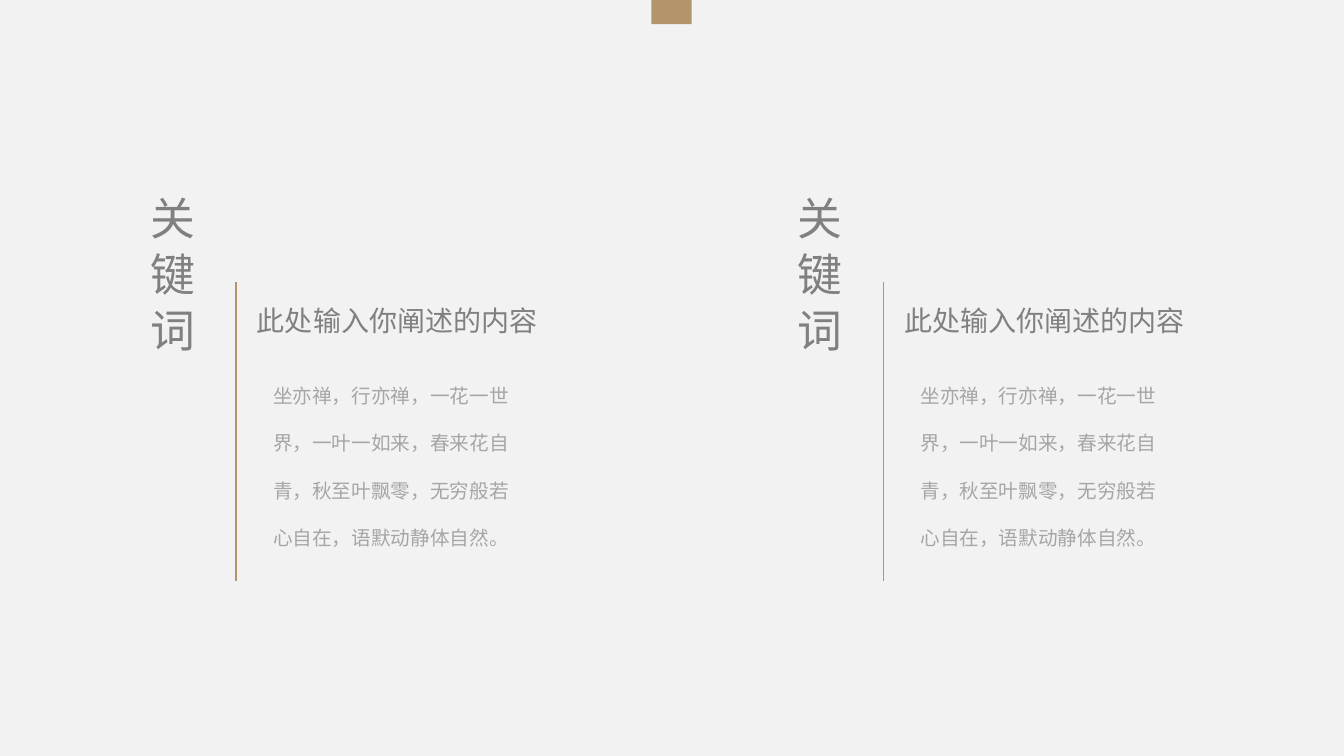
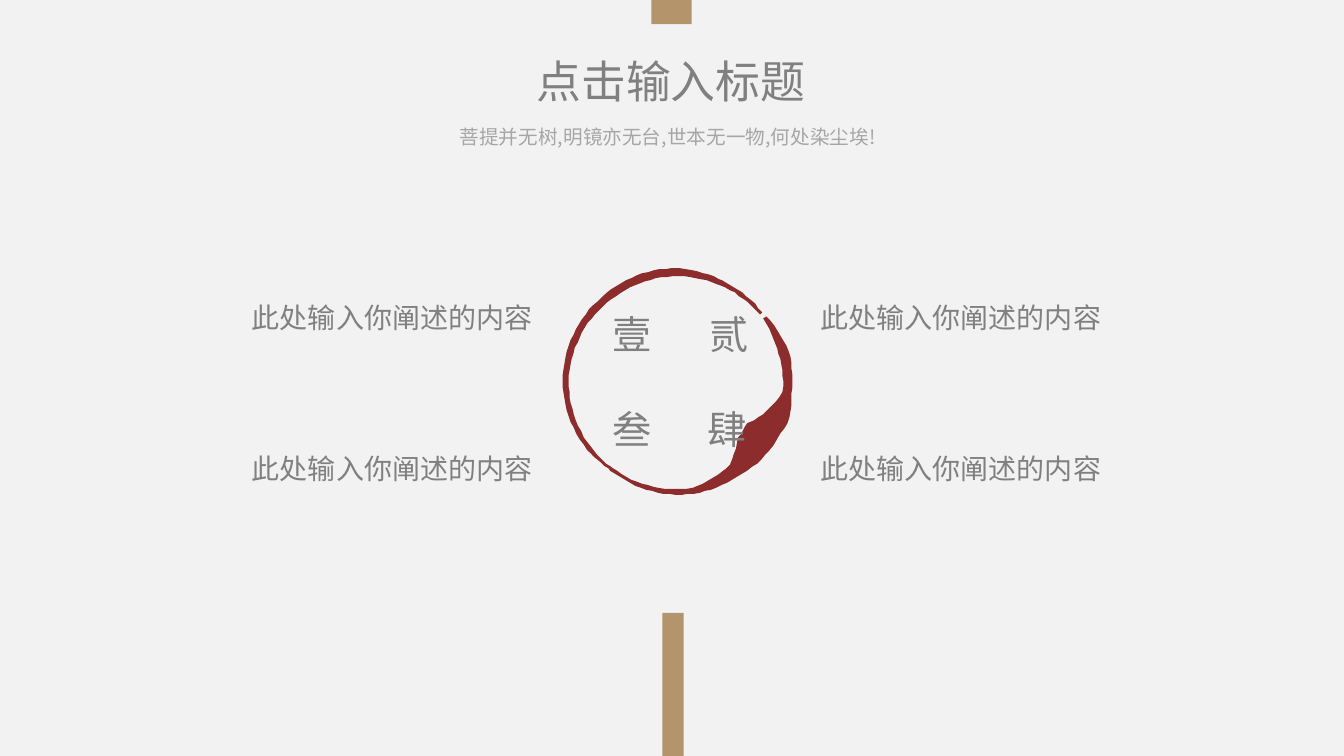
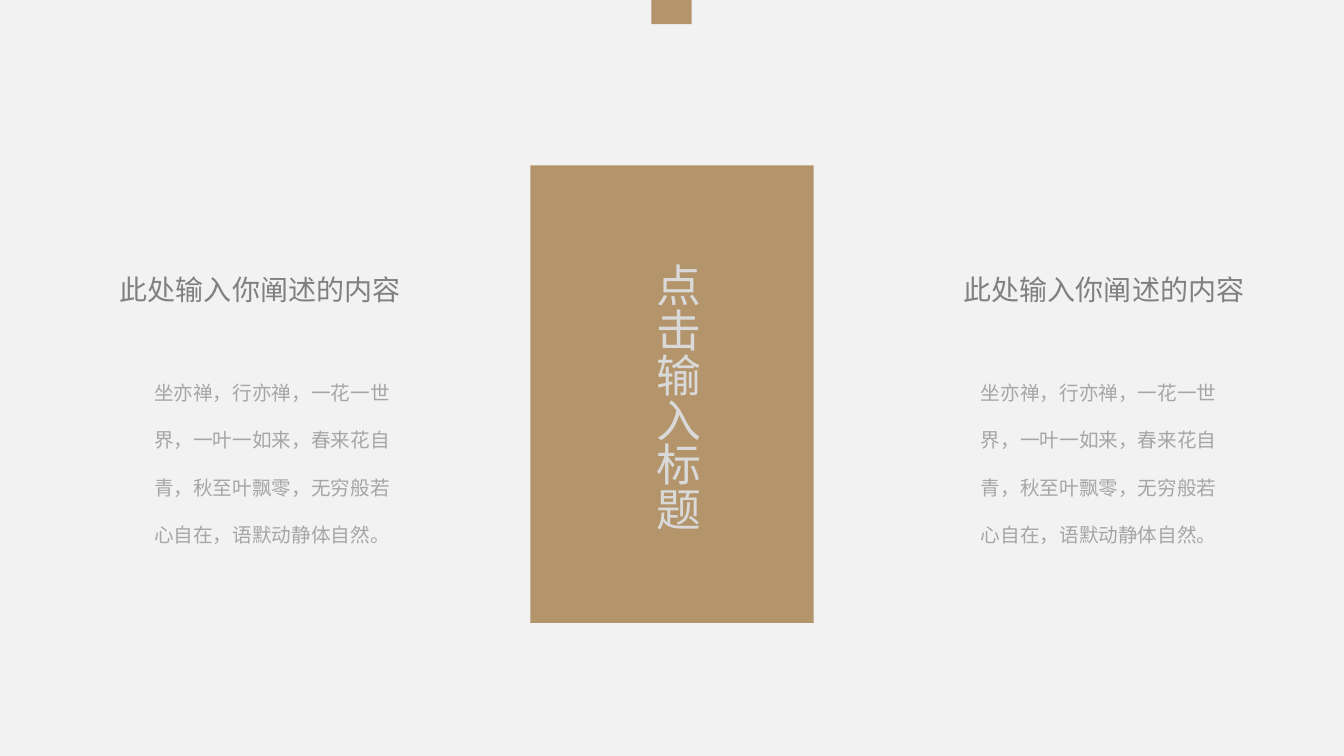
from itertools import pairwise, product
from math import cos, radians, sin

from lxml.etree import SubElement
from pptx import Presentation
from pptx.dml.color import RGBColor
from pptx.enum.shapes import MSO_CONNECTOR, MSO_SHAPE
from pptx.enum.text import MSO_ANCHOR, MSO_AUTO_SIZE, PP_ALIGN
from pptx.oxml.ns import qn
from pptx.util import Emu, Pt

PX = 9144
SLIDE_SIZE = (1333, 750)
FONT = "Noto Sans CJK SC"
COLORS = {
    "paper": "F2F2F2",
    "gold": "B3946B",
    "seal": "8C2C2C",
    "heading": "808080",
    "body": "A6A6A6",
    "on_gold": "D9D9D9",
}
STYLES = {
    "title": {"size": 32, "color": "heading"},
    "keyword": {"size": 32, "color": "heading", "vertical": True},
    "panel_title": {"size": 32, "color": "on_gold", "vertical": True},
    "numeral": {"size": 28, "color": "heading"},
    "heading": {"size": 20, "color": "heading", "spacing": 1.5},
    "subtitle": {"size": 14, "color": "body", "wrap": True},
    "verse": {"size": 14, "color": "body", "spacing": 2.0, "wrap": True},
}

TITLE = "点击输入标题"
SUBTITLE = "菩提并无树,明镜亦无台,世本无一物,何处染尘埃!"
KEYWORD = "关 键 词"
HEADING = "此处输入你阐述的内容"
VERSE = ("坐亦禅，行亦禅，一花一世界，一叶一如来，春来花自青，"
         "秋至叶飘零，无穷般若心自在，语默动静体自然。")

KEYWORD_SIZE = (74, 190)
HEADING_SIZE = (301, 53)
VERSE_SIZE = (268, 199)
NUMERAL_SIZE = (59, 57)

TOP_BAND = (646, 0, 40, 24)
BOTTOM_BAND = (657, 608, 21, 142)
PANEL = (526, 164, 281, 454)
TITLE_BOX = (522, 48, 289, 64)
SUBTITLE_BOX = (446, 119, 452, 34)
PANEL_TITLE_BOX = (634, 256, 74, 279)

KEYWORD_COLUMNS = [127, 769]
KEYWORD_TOP = 185
RULE_INDENT, RULE_TOP, RULE_BOTTOM = 107, 280, 576
HEADING_INDENT, HEADING_TOP = 118, 280
VERSE_INDENT, VERSE_TOP = 134, 353

HEADING_COLUMNS, HEADING_ROWS = [240, 804], [277, 426]
NUMERALS = [("壹", 598, 303), ("贰", 694, 303), ("叁", 598, 397), ("肆", 692, 397)]

PANEL_SIDES = [
    {"heading_left": 109, "verse_left": 143},
    {"heading_left": 946, "verse_left": 963},
]
PANEL_HEADING_TOP, PANEL_VERSE_TOP = 249, 350

RING_CENTER = (672, 378)
RING_STEP = 3
RING_STROKE = [
    {"angle": -36, "outer": 109, "inner": 105},
    {"angle": -15, "outer": 114, "inner": 104},
    {"angle": 6, "outer": 114, "inner": 105},
    {"angle": 18, "outer": 117, "inner": 94},
    {"angle": 31, "outer": 114, "inner": 81},
    {"angle": 43, "outer": 114, "inner": 82},
    {"angle": 58, "outer": 112, "inner": 98},
    {"angle": 82, "outer": 113, "inner": 107},
    {"angle": 128, "outer": 111, "inner": 108},
    {"angle": 153, "outer": 113, "inner": 108},
    {"angle": 180, "outer": 114, "inner": 108},
    {"angle": 237, "outer": 112, "inner": 104},
    {"angle": 268, "outer": 112, "inner": 104},
    {"angle": 294, "outer": 109, "inner": 104},
    {"angle": 321, "outer": 108, "inner": 105},
]


def rgb(name):
    return RGBColor.from_string(COLORS[name])


def emu(lengths):
    return [Emu(length * PX) for length in lengths]


def write(holder, text, style, box):
    look = STYLES[style]
    holder.left, holder.top, holder.width, holder.height = emu(box)
    frame = holder.text_frame
    frame.text = text
    frame.word_wrap = look.get("wrap", False)
    frame.auto_size = MSO_AUTO_SIZE.SHAPE_TO_FIT_TEXT
    frame.vertical_anchor = MSO_ANCHOR.TOP
    if look.get("vertical"):
        frame._txBody.bodyPr.set("vert", "eaVert")
    paragraph = frame.paragraphs[0]
    paragraph.alignment = PP_ALIGN.LEFT
    paragraph.line_spacing = look.get("spacing", 1.0)
    run = paragraph.runs[0]
    run.font.size = Pt(look["size"])
    run.font.color.rgb = rgb(look["color"])
    run.font.name = FONT
    SubElement(run.font._element, qn("a:ea"), typeface=FONT)


def add_text(slide, text, style, box):
    write(slide.shapes.add_textbox(*emu(box)), text, style, box)


def add_heading(slide, left, top):
    add_text(slide, HEADING, "heading", (left, top, *HEADING_SIZE))


def add_verse(slide, left, top):
    add_text(slide, VERSE, "verse", (left, top, *VERSE_SIZE))


def add_title(slide, style, box):
    title = slide.shapes.title
    slide.shapes._spTree.append(title._element)
    write(title, TITLE, style, box)


def paint(shape, color):
    shape.shadow.inherit = False
    shape.fill.solid()
    shape.fill.fore_color.rgb = rgb(color)
    shape.line.fill.background()


def add_band(slide, box):
    paint(slide.shapes.add_shape(MSO_SHAPE.RECTANGLE, *emu(box)), "gold")


def add_rule(slide, x, top, bottom):
    rule = slide.shapes.add_connector(
        MSO_CONNECTOR.STRAIGHT, *emu((x, top, x, bottom)))
    rule.line.color.rgb = rgb("gold")
    rule.line.width = Pt(1)
    SubElement(rule._element.spPr, qn("a:effectLst"))


def ring_point(angle, radius):
    x, y = RING_CENTER
    return x + radius * cos(radians(angle)), y + radius * sin(radians(angle))


def ring_edge(edge):
    points = []
    for start, end in pairwise(RING_STROKE):
        sweep = end["angle"] - start["angle"]
        for turn in range(0, sweep, RING_STEP):
            radius = start[edge] + (end[edge] - start[edge]) * turn / sweep
            points.append(ring_point(start["angle"] + turn, radius))
    tip = RING_STROKE[-1]
    return points + [ring_point(tip["angle"], tip[edge])]


def add_brush_ring(slide):
    first, *rest = ring_edge("outer") + ring_edge("inner")[::-1]
    outline = slide.shapes.build_freeform(*first, scale=PX)
    outline.add_line_segments(rest, close=True)
    paint(outline.convert_to_shape(), "seal")


def add_slide(deck, layout_name):
    slide = deck.slides.add_slide(deck.slide_layouts.get_by_name(layout_name))
    add_band(slide, TOP_BAND)
    return slide


def keyword_slide(deck):
    slide = add_slide(deck, "Blank")
    for left in KEYWORD_COLUMNS:
        add_text(slide, KEYWORD, "keyword", (left, KEYWORD_TOP, *KEYWORD_SIZE))
        add_rule(slide, left + RULE_INDENT, RULE_TOP, RULE_BOTTOM)
        add_heading(slide, left + HEADING_INDENT, HEADING_TOP)
        add_verse(slide, left + VERSE_INDENT, VERSE_TOP)


def ring_slide(deck):
    slide = add_slide(deck, "Title Only")
    add_brush_ring(slide)
    for numeral, left, top in NUMERALS:
        add_text(slide, numeral, "numeral", (left, top, *NUMERAL_SIZE))
    for top, left in product(HEADING_ROWS, HEADING_COLUMNS):
        add_heading(slide, left, top)
    add_band(slide, BOTTOM_BAND)
    add_title(slide, "title", TITLE_BOX)
    add_text(slide, SUBTITLE, "subtitle", SUBTITLE_BOX)


def panel_slide(deck):
    slide = add_slide(deck, "Title Only")
    add_band(slide, PANEL)
    for side in PANEL_SIDES:
        add_heading(slide, side["heading_left"], PANEL_HEADING_TOP)
        add_verse(slide, side["verse_left"], PANEL_VERSE_TOP)
    add_title(slide, "panel_title", PANEL_TITLE_BOX)


def main():
    deck = Presentation()
    deck.slide_width, deck.slide_height = emu(SLIDE_SIZE)
    backdrop = deck.slide_master.background.fill
    backdrop.solid()
    backdrop.fore_color.rgb = rgb("paper")
    for build in (keyword_slide, ring_slide, panel_slide):
        build(deck)
    deck.save("out.pptx")


if __name__ == "__main__":
    main()
